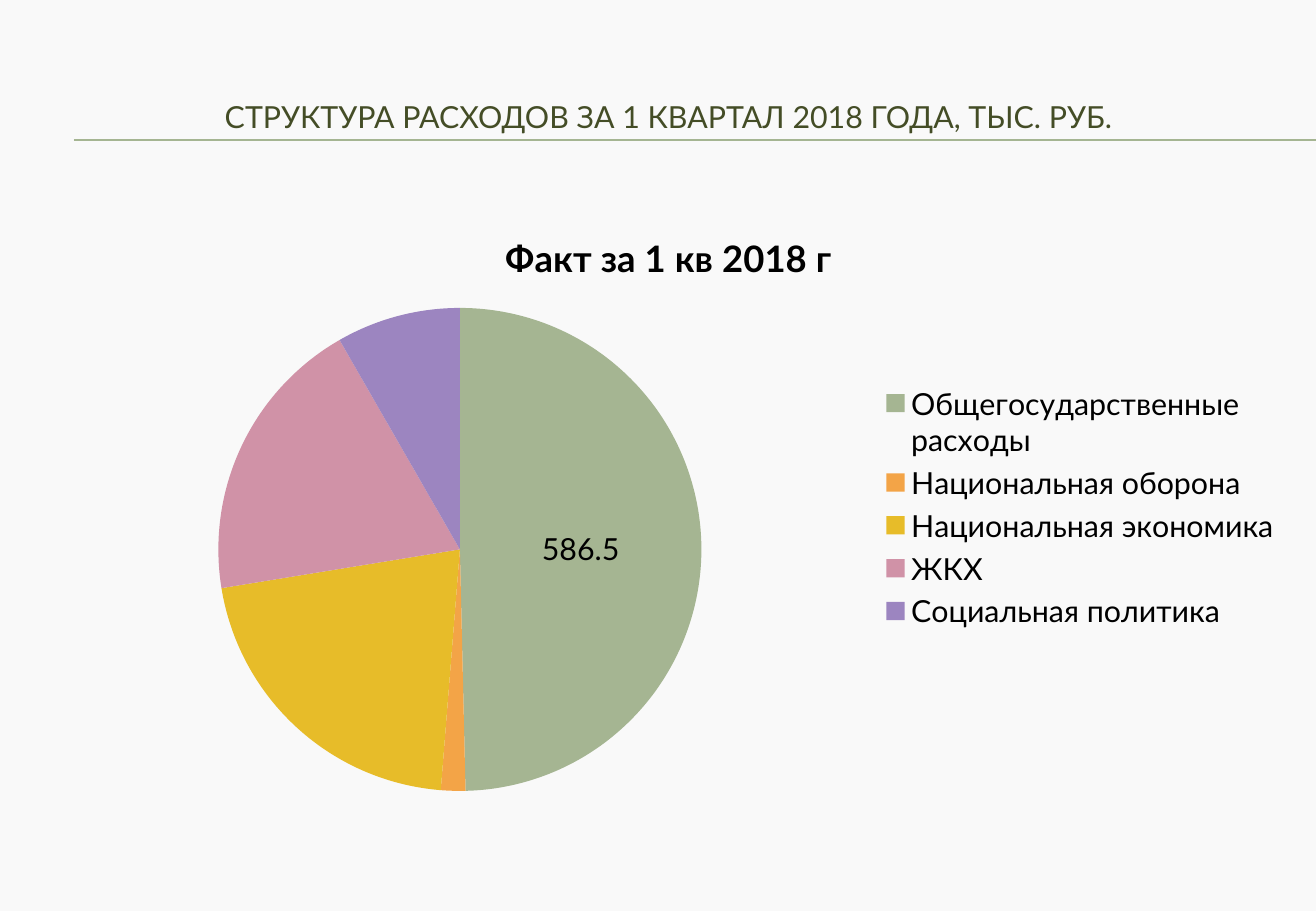
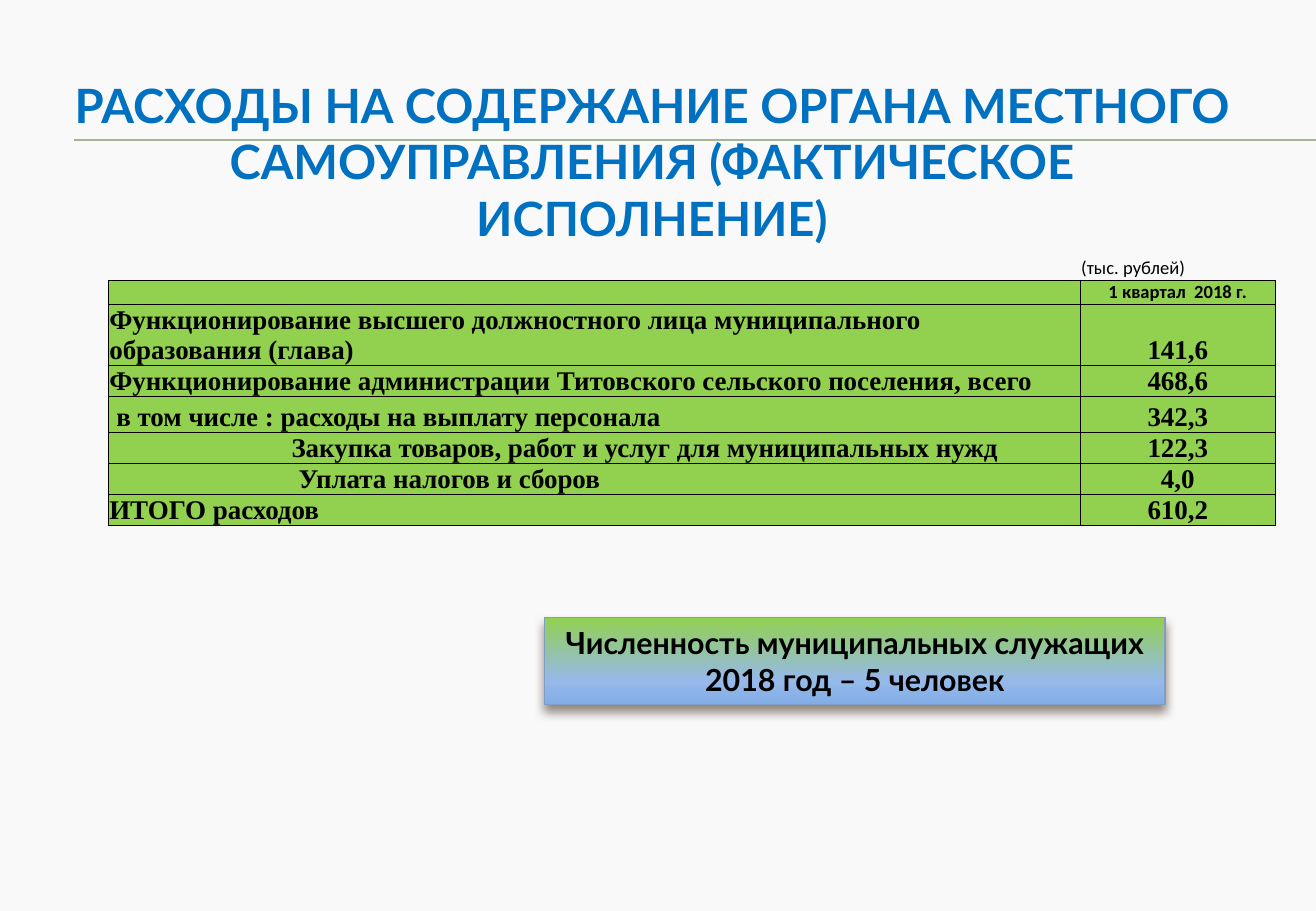
from dataclasses import dataclass

from lxml import etree
from pptx import Presentation
from pptx.chart.data import CategoryChartData
from pptx.dml.color import RGBColor
from pptx.enum.chart import XL_CHART_TYPE as ChartType
from pptx.enum.chart import XL_LABEL_POSITION as LabelPosition
from pptx.enum.chart import XL_LEGEND_POSITION as LegendPosition
from pptx.enum.shapes import MSO_CONNECTOR as Connector
from pptx.enum.shapes import MSO_SHAPE as Shape
from pptx.enum.text import MSO_ANCHOR as Anchor
from pptx.enum.text import MSO_AUTO_SIZE as AutoSize
from pptx.enum.text import PP_ALIGN as Align
from pptx.oxml import parse_xml
from pptx.oxml.ns import qn
from pptx.util import Emu, Pt

EMU_PER_PX = 7620  # 120 px to the inch
PAGE_WIDTH, PAGE_HEIGHT = 1300, 900
TITLE_ONLY = 5
DRAWING_NS = 'xmlns:a="http://schemas.openxmlformats.org/drawingml/2006/main"'


@dataclass(frozen=True)
class Theme:
    background: str = "F9F9F9"
    rule: str = "A5B592"
    olive: str = "444D26"
    blue: str = "0070C0"
    black: str = "000000"
    green: str = "92D050"
    box_line: str = "809EC2"
    box_shadow: str = "4E3B30"
    box_stops: tuple = ((0, "92D050"), (72, "96B9E9"), (100, "82AEE7"))
    slices: tuple = ("A5B592", "F3A447", "E7BC29", "D092A7", "9C85C0")
    font: str = "Lato"
    note_font: str = "Calibri"
    table_font: str = "Times New Roman"
    note_size: float = 11
    table_size: float = 16
    text_size: float = 18
    chart_title_size: float = 21.6
    headline_size: float = 28


THEME = Theme()

EXPENSES = {
    "Общегосударственные расходы": 586.5,
    "Национальная оборона": 19.3,
    "Национальная экономика": 250.2,
    "ЖКХ": 227.7,
    "Социальная политика": 98.1,
}

# name, indent in px, amount, row height in px
UPKEEP = (
    ("Функционирование высшего должностного лица муниципального образования (глава)", 1, "141,6", 29),
    ("Функционирование администрации Титовского сельского поселения, всего", 1, "468,6", 29),
    ("в том числе : расходы на выплату персонала", 8, "342,3", 36),
    ("Закупка товаров, работ и услуг для муниципальных нужд", 181, "122,3", 30),
    ("Уплата налогов и сборов", 188, "4,0", 29),
    ("ИТОГО расходов", 1, "610,2", 29),
)


def px(length):
    return Emu(length * EMU_PER_PX)


def rgb(color):
    return RGBColor.from_string(color)


def drawing(tag, inner="", attributes=""):
    return parse_xml(f"<a:{tag} {DRAWING_NS} {attributes}>{inner}</a:{tag}>")


def style_font(font, size=THEME.text_size, color=THEME.black, bold=False, name=THEME.font):
    font.size, font.bold, font.name = Pt(size), bold, name
    font.color.rgb = rgb(color)


def write(frame, *lines, align=Align.LEFT, **font_format):
    """Put one paragraph per line into a text frame."""
    for index, line in enumerate(lines):
        para = frame.add_paragraph() if index else frame.paragraphs[0]
        para.alignment = align
        span = para.add_run()
        span.text = line
        style_font(span.font, **font_format)


def add_rule(page, y):
    """Draw the rule on a page, then move it to that page's layout."""
    rule = page.shapes.add_connector(Connector.STRAIGHT, px(73), px(y), px(PAGE_WIDTH), px(y))
    rule.line.color.rgb = rgb(THEME.rule)
    rule.line.width = Pt(0.75)
    rule.element.spPr.append(drawing("effectLst"))
    page.slide_layout.shapes.element.append(rule.element)


def set_title(page, text, left, top, width, height, **font_format):
    title = page.shapes.title
    title.left, title.top, title.width, title.height = map(px, (left, top, width, height))
    frame = title.text_frame
    frame.word_wrap = True
    frame.auto_size = AutoSize.NONE
    frame.vertical_anchor = Anchor.MIDDLE
    write(frame, text, align=Align.CENTER, **font_format)


def add_pie(page, name, values, left, top, width, height):
    chart_data = CategoryChartData()
    chart_data.categories = list(values)
    chart_data.add_series(name, list(values.values()))
    chart = page.shapes.add_chart(
        ChartType.PIE, px(left), px(top), px(width), px(height), chart_data).chart
    style_font(chart.font)
    chart.has_title = True
    write(chart.chart_title.text_frame, name, align=Align.CENTER,
          size=THEME.chart_title_size, bold=True)
    chart.has_legend = True
    chart.legend.position = LegendPosition.RIGHT
    chart.legend.include_in_layout = False
    style_font(chart.legend.font)

    plot = chart.plots[0]
    plot.vary_by_categories = True
    plot.has_data_labels = True
    labels = plot.data_labels
    labels.show_value = True
    labels.show_percentage = False
    labels.position = LabelPosition.BEST_FIT
    style_font(labels.font)
    points = plot.series[0].points
    for index, color in enumerate(THEME.slices):
        fill = points[index].format.fill
        fill.solid()
        fill.fore_color.rgb = rgb(color)
    points[0].data_label.position = LabelPosition.CENTER


def set_borders(cell, sides):
    properties = cell._tc.get_or_add_tcPr()
    line_fill = f'<a:solidFill><a:srgbClr val="{THEME.black}"/></a:solidFill>'
    for index, side in enumerate("LRTB"):
        inner = line_fill if side in sides else "<a:noFill/>"
        properties.insert(index, drawing(f"ln{side}", inner, f'w="{Pt(0.5)}"'))


def fill_cell(cell, text="", indent=1, fill=THEME.green, borders="LRTB", **text_format):
    cell.margin_left, cell.margin_right = px(indent), px(1)
    cell.margin_top, cell.margin_bottom = px(1), 0
    cell.vertical_anchor = Anchor.BOTTOM
    if fill:
        cell.fill.solid()
        cell.fill.fore_color.rgb = rgb(fill)
    else:
        cell.fill.background()
    set_borders(cell, borders)
    if text:
        write(cell.text_frame, text, **text_format)
    else:
        end = etree.SubElement(cell.text_frame.paragraphs[0]._p, qn("a:endParaRPr"))
        end.set("sz", str(THEME.note_size * 100))


def add_upkeep_table(page, left, top, column_widths):
    heights = [23, 23] + [row[-1] for row in UPKEEP]
    table = page.shapes.add_table(
        len(heights), len(column_widths), px(left), px(top),
        px(sum(column_widths)), px(sum(heights))).table
    table.first_row = table.horz_banding = False
    for column, width in zip(table.columns, column_widths):
        column.width = px(width)
    for row, height in zip(table.rows, heights):
        row.height = px(height)

    note = dict(size=THEME.note_size, name=THEME.note_font)
    entry = dict(size=THEME.table_size, name=THEME.table_font, bold=True)
    fill_cell(table.cell(0, 0), fill=None, borders="B")
    fill_cell(table.cell(0, 1), "(тыс. рублей)", fill=None, borders="B", **note)
    fill_cell(table.cell(1, 0))
    fill_cell(table.cell(1, 1), "1 квартал  2018 г.", align=Align.CENTER, bold=True, **note)
    for index, (name, indent, amount, _) in enumerate(UPKEEP, start=2):
        fill_cell(table.cell(index, 0), name, indent, **entry)
        fill_cell(table.cell(index, 1), amount, align=Align.CENTER, **entry)


def add_gradient_box(page, lines, left, top, width, height):
    box = page.shapes.add_shape(Shape.RECTANGLE, px(left), px(top), px(width), px(height))
    box.line.color.rgb = rgb(THEME.box_line)
    box.line.width = Pt(0.79)
    stops = "".join(f'<a:gs pos="{pos * 1000}"><a:srgbClr val="{color}"/></a:gs>'
                    for pos, color in THEME.box_stops)
    properties = box.element.spPr
    properties.find(qn("a:prstGeom")).addnext(
        drawing("gradFill", f'<a:gsLst>{stops}</a:gsLst><a:lin ang="5400000" scaled="0"/>'))
    properties.append(drawing(
        "effectLst",
        f'<a:outerShdw blurRad="{Pt(6)}" dist="{Pt(4)}" dir="5400000" rotWithShape="0">'
        f'<a:srgbClr val="{THEME.box_shadow}"><a:alpha val="60000"/></a:srgbClr></a:outerShdw>'))
    box.text_frame.word_wrap = True
    box.text_frame.vertical_anchor = Anchor.MIDDLE
    write(box.text_frame, *lines, align=Align.CENTER, bold=True)


def build_structure_page(page):
    set_title(page, "СТРУКТУРА РАСХОДОВ ЗА 1 КВАРТАЛ 2018 ГОДА, ТЫС. РУБ.",
              43, 60, 1235, 110, color=THEME.olive)
    add_pie(page, "Факт за 1 кв 2018 г", EXPENSES, 43, 204, 1235, 594)


def build_upkeep_page(page):
    set_title(page, "РАСХОДЫ НА СОДЕРЖАНИЕ ОРГАНА МЕСТНОГО САМОУПРАВЛЕНИЯ (ФАКТИЧЕСКОЕ ИСПОЛНЕНИЕ)",
              59, 84, 1170, 150, size=THEME.headline_size, color=THEME.blue, bold=True)
    add_upkeep_table(page, 107, 253, (960, 193))
    add_gradient_box(page, ("Численность муниципальных служащих", "2018 год – 5 человек"),
                     538, 610, 613, 86)


def main():
    deck = Presentation()
    deck.slide_width, deck.slide_height = px(PAGE_WIDTH), px(PAGE_HEIGHT)
    layout = deck.slide_layouts[TITLE_ONLY]
    layout.background.fill.solid()
    layout.background.fill.fore_color.rgb = rgb(THEME.background)
    structure_page, upkeep_page = (deck.slides.add_slide(layout) for _ in range(2))
    for y in (138, 139):
        add_rule(structure_page, y)
    build_structure_page(structure_page)
    build_upkeep_page(upkeep_page)
    deck.save("out.pptx")


if __name__ == "__main__":
    main()
